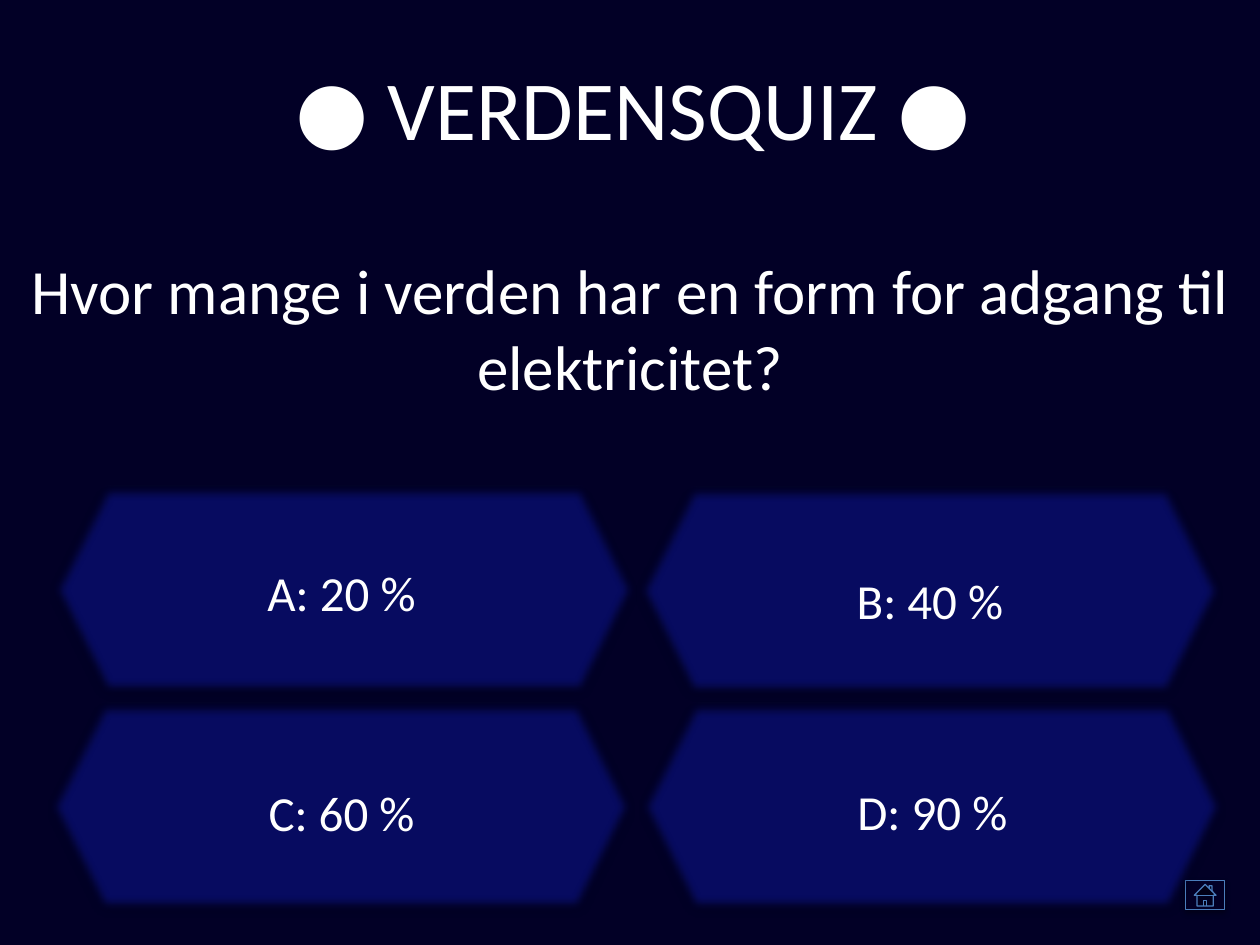
"""Build a quiz slide with one question and four hexagonal answers."""
from lxml import etree
from pptx import Presentation
from pptx.dml.color import RGBColor
from pptx.enum.shapes import MSO_SHAPE
from pptx.enum.text import MSO_ANCHOR, PP_ALIGN
from pptx.oxml.ns import qn
from pptx.util import Inches, Pt

HEXAGON, HOME = MSO_SHAPE.HEXAGON, MSO_SHAPE.ACTION_BUTTON_HOME
TOP, MIDDLE = MSO_ANCHOR.TOP, MSO_ANCHOR.MIDDLE
CENTER = PP_ALIGN.CENTER

COLORS = {"night": "020026", "answer": "070B60", "line": "4B7EBC",
          "text": "FFFFFF", "shadow": "000000"}
BODY, ACCENT = "Calibri", "Comic Neue"

TITLE = [("●", ACCENT, True), (" VERDENSQUIZ ", BODY, False), ("●", ACCENT, True)]
QUESTION = "Hvor mange i verden har en form for adgang til elektricitet?"
HEXAGON_SIZE = (4.69, 1.66)
ANSWERS = [
    ("D: 90 %", (5.05, 5.57), (5.37, 6.15, 4.06, 0.57)),
    ("C: 60 %", (0.36, 5.57), (0.6, 6.16, 4.22, 0.57)),
    ("A: 20 %", (0.38, 3.85), (0.6, 4.41, 4.22, 0.57)),
    ("B: 40 %", (5.03, 3.86), (5.35, 4.48, 4.06, 0.57)),
]


def color(name):
    return RGBColor.from_string(COLORS[name])


def add_text(page, spans, place, size, anchor=MIDDLE):
    box = page.shapes.add_textbox(*map(Inches, place))
    frame = box.text_frame
    frame.word_wrap = True
    frame.vertical_anchor = anchor
    para = frame.paragraphs[0]
    para.alignment = CENTER
    for text, font, bold in spans:
        span = para.add_run()
        span.text = text
        span.font.name = font
        span.font.size = Pt(size)
        span.font.bold = bold
        span.font.color.rgb = color("text")


def add_panel(page, kind, place, fill, soft_edge=0):
    panel = page.shapes.add_shape(kind, *map(Inches, place))
    panel.fill.solid()
    panel.fill.fore_color.rgb = color(fill)
    panel.line.color.rgb = color("line")
    panel.line.width = Pt(0.75)
    panel.shadow.inherit = False
    effects = panel._element.spPr.find(qn("a:effectLst"))
    shadow = etree.SubElement(effects, qn("a:outerShdw"), blurRad=str(Pt(3.1)),
                              dist=str(Pt(1.8)), dir="5400000", rotWithShape="0")
    tint = etree.SubElement(shadow, qn("a:srgbClr"), val=COLORS["shadow"])
    etree.SubElement(tint, qn("a:alpha"), val="35000")
    if soft_edge:
        etree.SubElement(effects, qn("a:softEdge"), rad=str(Pt(soft_edge)))


def main():
    deck = Presentation()
    deck.slide_width, deck.slide_height = Inches(10), Inches(7.5)
    page = deck.slides.add_slide(deck.slide_layouts[6])
    page.background.fill.solid()
    page.background.fill.fore_color.rgb = color("night")

    add_text(page, TITLE, (0.33, 0.39, 9.39, 0.91), 48)
    add_text(page, [(QUESTION, BODY, False)], (0, 1.95, 10, 1.31), 36, anchor=TOP)
    add_panel(page, HOME, (9.41, 6.99, 0.31, 0.23), "night")
    for _, corner, _ in ANSWERS:
        add_panel(page, HEXAGON, corner + HEXAGON_SIZE, "answer", soft_edge=5)
    for answer, _, place in ANSWERS:
        add_text(page, [(answer, BODY, False)], place, 28)

    deck.save("out.pptx")


if __name__ == "__main__":
    main()
